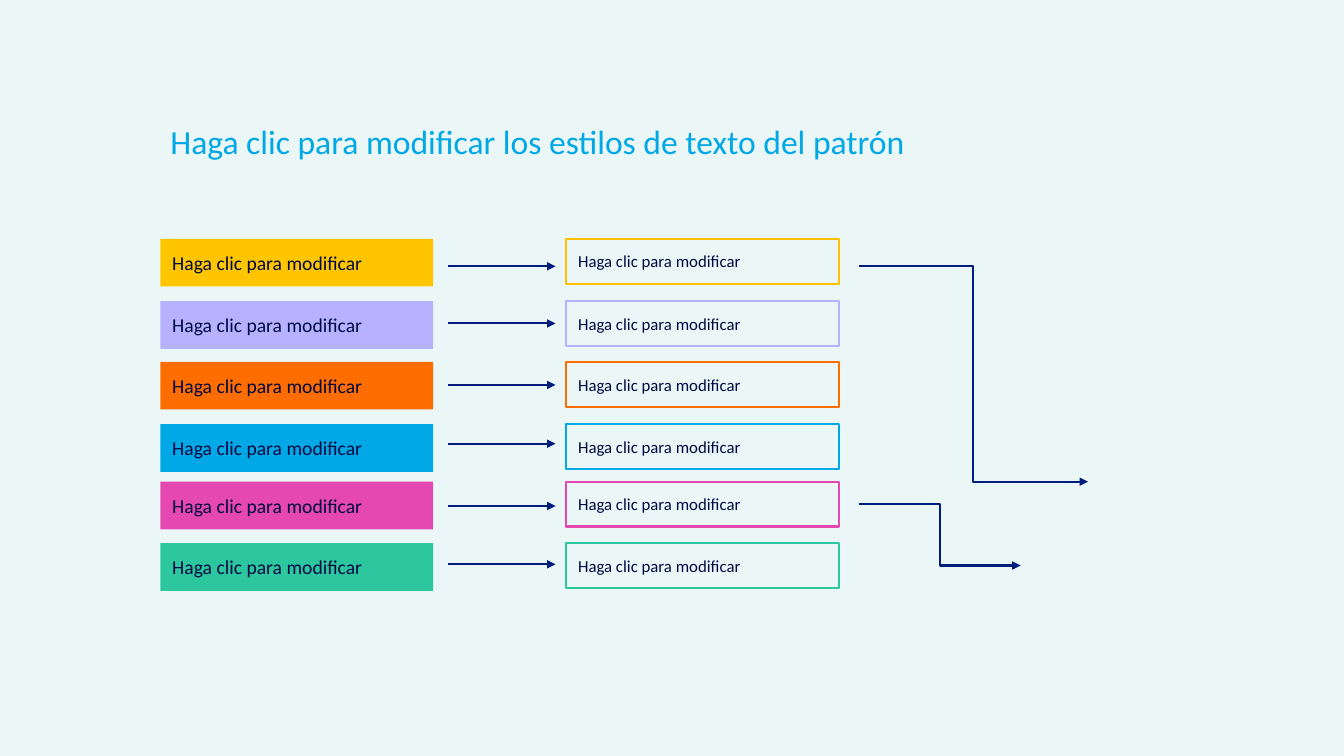
"""Build a slide of six colour-coded steps, each linked to a detail box."""
import pptx
import pptx.dml.color
import pptx.enum.shapes
import pptx.enum.text
import pptx.oxml.ns
import pptx.util
from lxml import etree

Cm, Pt = pptx.util.Cm, pptx.util.Pt
RGBColor = pptx.dml.color.RGBColor
CONNECTOR = pptx.enum.shapes.MSO_CONNECTOR
ANCHOR = pptx.enum.text.MSO_ANCHOR

TITLE = "Haga clic para modificar los estilos de texto del patrón"
LABEL = "Haga clic para modificar"

BACKGROUND = RGBColor(0xEB, 0xF7, 0xF7)
NAVY = RGBColor(0x00, 0x1C, 0x7C)
INK = RGBColor(0x00, 0x08, 0x41)
GOLD = RGBColor(0xFF, 0xC6, 0x00)
AMBER = RGBColor(0xFF, 0xC0, 0x00)
LILAC = RGBColor(0xB6, 0xB2, 0xFF)
ORANGE = RGBColor(0xFE, 0x6D, 0x00)
BLUE = RGBColor(0x00, 0xA8, 0xE6)
PINK = RGBColor(0xE6, 0x48, 0xB1)
GREEN = RGBColor(0x2D, 0xC7, 0x9F)

# fmt: off
STEPS = [
    (6.02, 6.71, GOLD, AMBER),
    (7.59, 8.15, LILAC, LILAC),
    (9.12, 9.7, ORANGE, ORANGE),
    (10.69, 11.18, BLUE, BLUE),
    (12.14, 12.75, PINK, PINK),
    (13.69, 14.22, GREEN, GREEN),
]
ELBOWS = [(21.64, 6.71, 27.42, 12.14), (21.64, 12.7, 25.72, 14.25)]
STEP_LEFT, DETAIL_LEFT, BOX_WIDTH = 4.04, 14.27, 6.88
STEP_HEIGHT, DETAIL_HEIGHT = 1.2, 1.13
ARROW_START, ARROW_END = 11.28, 14


def style_text(frame, text, size, color):
    frame.text = text
    frame.word_wrap = True
    para = frame.paragraphs[0]
    para.alignment = pptx.enum.text.PP_ALIGN.LEFT
    para.space_before = Pt(0)
    para.line_spacing = 1.0
    font = para.runs[0].font
    font.name, font.size, font.color.rgb = "Calibri", Pt(size), color


def add_box(page, left, top, height, size):
    box = page.shapes.add_shape(
        pptx.enum.shapes.MSO_SHAPE.RECTANGLE,
        Cm(left), Cm(top), Cm(BOX_WIDTH), Cm(height))
    box.shadow.inherit = False
    frame = box.text_frame
    style_text(frame, LABEL, size, INK)
    frame.vertical_anchor = ANCHOR.MIDDLE
    frame.margin_left = frame.margin_right = Cm(0.3)
    frame.margin_top = frame.margin_bottom = Cm(0.3)
    return box


def add_arrow(page, kind, *ends):
    arrow = page.shapes.add_connector(kind, *map(Cm, ends))
    arrow.line.color.rgb = NAVY
    arrow.line.width = Pt(1.5)
    qn = pptx.oxml.ns.qn
    etree.SubElement(arrow.line._get_or_add_ln(), qn("a:tailEnd"), type="triangle")
    etree.SubElement(arrow._element.spPr, qn("a:effectLst"))


def main():
    deck = pptx.Presentation()
    deck.slide_width, deck.slide_height = Cm(33.87), Cm(19.05)
    page = deck.slides.add_slide(deck.slide_layouts[5])
    page.background.fill.solid()
    page.background.fill.fore_color.rgb = BACKGROUND

    title = page.shapes.title
    title.left, title.top = Cm(STEP_LEFT), Cm(2.92)
    title.width, title.height = Cm(24.05), Cm(2.54)
    style_text(title.text_frame, TITLE, 24, BLUE)
    title.text_frame.vertical_anchor = ANCHOR.TOP
    title.text_frame.auto_size = pptx.enum.text.MSO_AUTO_SIZE.NONE

    for top, arrow_y, fill, outline in STEPS:
        step = add_box(page, STEP_LEFT, top, STEP_HEIGHT, 14)
        step.fill.solid()
        step.fill.fore_color.rgb = fill
        step.line.fill.background()

        detail = add_box(page, DETAIL_LEFT, top, DETAIL_HEIGHT, 12)
        detail.fill.background()
        detail.line.color.rgb = outline
        detail.line.width = Pt(1.5)

        add_arrow(page, CONNECTOR.STRAIGHT, ARROW_START, arrow_y, ARROW_END, arrow_y)

    for ends in ELBOWS:
        add_arrow(page, CONNECTOR.ELBOW, *ends)

    deck.save("out.pptx")


if __name__ == "__main__":
    main()
